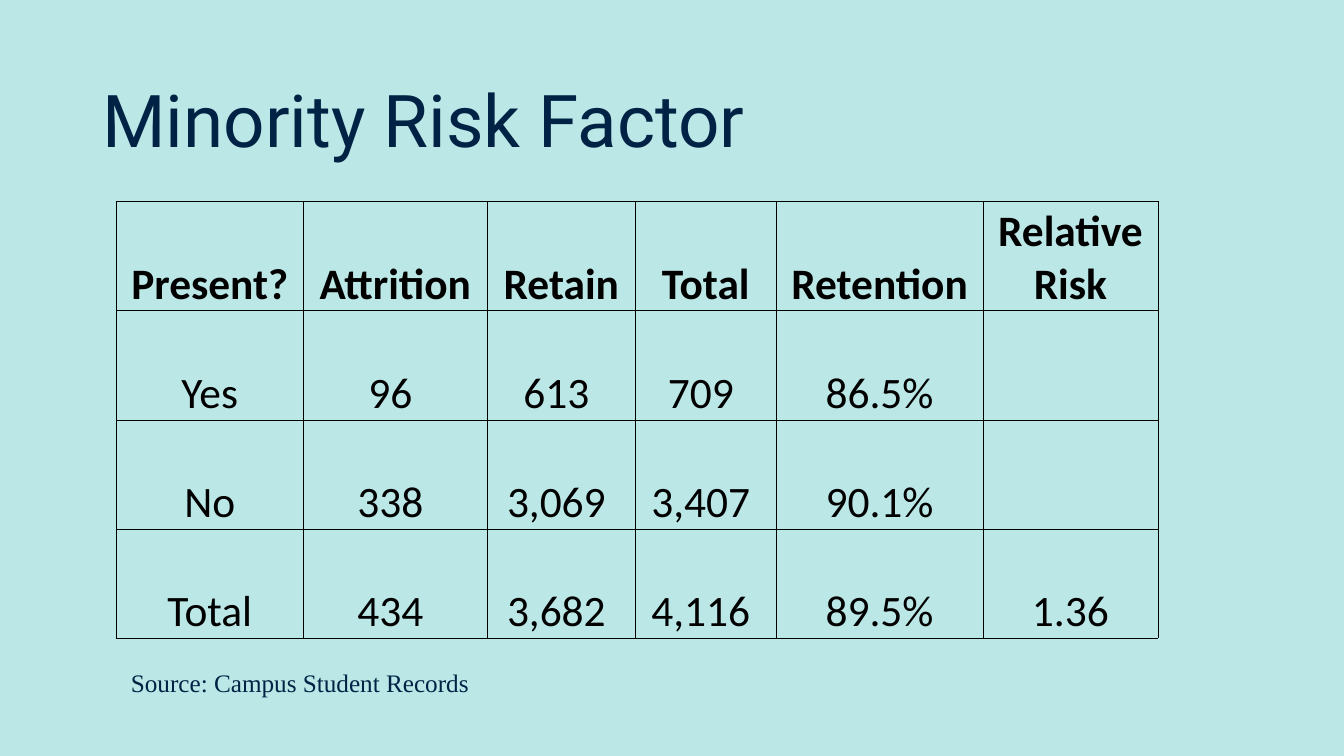
from dataclasses import dataclass

from lxml.etree import SubElement
from pptx import Presentation
from pptx.dml.color import RGBColor
from pptx.enum.text import MSO_ANCHOR, PP_ALIGN
from pptx.oxml.ns import qn
from pptx.util import Cm, Pt


@dataclass(frozen=True)
class Theme:
    background: str = "BBE7E6"
    navy: str = "002244"
    black: str = "000000"
    title_size: int = 52
    table_size: int = 31
    source_size: int = 18
    border_width: float = 0.5


THEME = Theme()
HEADER = ["Present?", "Attrition", "Retain", "Total", "Retention", "Relative Risk"]
ROWS = [
    ["Yes", "96", "613", "709", "86.5%", ""],
    ["No", "338", "3,069", "3,407", "90.1%", ""],
    ["Total", "434", "3,682", "4,116", "89.5%", "1.36"],
]
COLUMN_WIDTHS = [4.71, 4.64, 3.73, 3.55, 5.21, 4.41]
COUNT_COLUMNS = range(1, 4)
ROW_HEIGHT = 2.75


def set_all(target, values):
    for name, value in values.items():
        setattr(target, name, value)


def write(para, text, font, size, color, bold=False):
    span = para.add_run()
    span.text = text
    set_all(span.font, {"name": font, "size": Pt(size), "bold": bold})
    span.font.color.rgb = RGBColor.from_string(color)


def add_text(page, box, text, font, size, anchor, line_spacing):
    frame = page.shapes.add_textbox(*map(Cm, box)).text_frame
    set_all(frame, {"word_wrap": True, "vertical_anchor": anchor})
    para = frame.paragraphs[0]
    para.line_spacing = line_spacing
    write(para, text, font, size, THEME.navy)


def add_borders(cell):
    """Draw all four cell edges; call before setting the cell's fill."""
    properties = cell._tc.get_or_add_tcPr()
    for side in ("lnL", "lnR", "lnT", "lnB"):
        line = SubElement(properties, qn(f"a:{side}"), w=str(Pt(THEME.border_width)))
        fill = SubElement(line, qn("a:solidFill"))
        SubElement(fill, qn("a:srgbClr"), val=THEME.black)


def fill_cell(cell, text, is_header, is_count):
    """Counts get a wider right margin, which sets them slightly left of centre."""
    add_borders(cell)
    cell.fill.background()
    set_all(cell, {
        "vertical_anchor": MSO_ANCHOR.BOTTOM,
        "margin_left": Cm(0.08),
        "margin_right": Cm(0.33 if is_count else 0.08),
        "margin_top": Cm(0.08),
        "margin_bottom": 0,
    })
    para = cell.text_frame.paragraphs[0]
    para.alignment = PP_ALIGN.CENTER
    if text:
        write(para, text, "Calibri", THEME.table_size, THEME.black, is_header)


def add_risk_table(page, left, top):
    records = [HEADER, *ROWS]
    width, height = sum(COLUMN_WIDTHS), ROW_HEIGHT * len(records)
    table = page.shapes.add_table(
        len(records), len(HEADER), *map(Cm, (left, top, width, height))
    ).table
    set_all(table, {"first_row": False, "horz_banding": False})
    for column, column_width in zip(table.columns, COLUMN_WIDTHS):
        column.width = Cm(column_width)
    for row_index, record in enumerate(records):
        table.rows[row_index].height = Cm(ROW_HEIGHT)
        for column_index, text in enumerate(record):
            is_header = row_index == 0
            is_count = not is_header and column_index in COUNT_COLUMNS
            fill_cell(table.cell(row_index, column_index), text, is_header, is_count)


def build_risk_page(deck):
    page = deck.slides.add_slide(deck.slide_layouts[6])
    page.background.fill.solid()
    page.background.fill.fore_color.rgb = RGBColor.from_string(THEME.background)
    add_text(page, (2.33, 1.55, 29.21, 3.15), "Minority Risk Factor",
             "Roboto", THEME.title_size, MSO_ANCHOR.MIDDLE, 0.9)
    add_risk_table(page, 2.93, 5.08)
    add_text(page, (3.05, 16.69, 22.3, 1.02), "Source: Campus Student Records",
             "Times New Roman", THEME.source_size, MSO_ANCHOR.TOP, 1.0)


def main():
    deck = Presentation()
    set_all(deck, {"slide_width": Cm(33.87), "slide_height": Cm(19.05)})
    build_risk_page(deck)
    deck.save("out.pptx")


if __name__ == "__main__":
    main()
